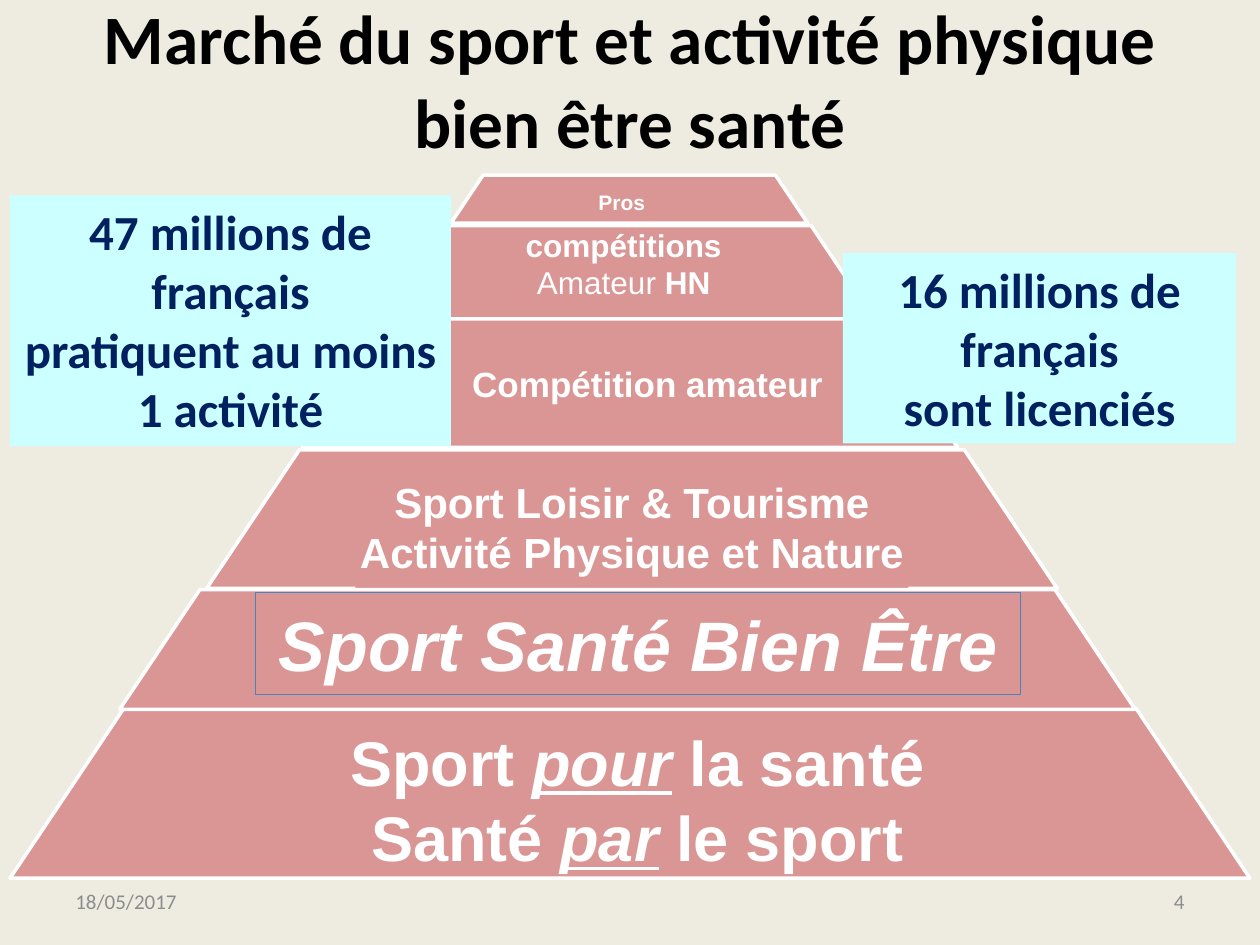
from dataclasses import dataclass

from pptx import Presentation
from pptx.dml.color import RGBColor
from pptx.enum.shapes import MSO_SHAPE as Shape
from pptx.enum.text import MSO_ANCHOR as Anchor, MSO_AUTO_SIZE as AutoSize, PP_ALIGN as Align
from pptx.util import Inches, Pt

CELL = 0.1
COLUMNS, ROWS = 100, 75


@dataclass(frozen=True)
class Theme:
    """Colours, fonts and type sizes of the slide."""
    background: str = "EEECE1"
    tier: str = "D99694"
    white: str = "FFFFFF"
    frame: str = "4F81BD"
    callout: str = "CCFFFF"
    navy: str = "002060"
    black: str = "000000"
    grey: str = "8C8C8C"
    label_font: str = "Arial"
    text_font: str = "Calibri"
    title_size: float = 39.6
    callout_size: int = 28
    footer_size: int = 12
    slope: float = 0.67
    tier_line: float = 2
    frame_line: float = 0.75
    label_inset: float = 0.3
    side_inset: float = 1
    end_inset: float = 0.5


THEME = Theme()
BOLD = {"bold": True}
PLAIN = {"bold": False}
ITALIC = {"bold": True, "italic": True}
STRESSED = {"bold": True, "italic": True, "underline": True}

# Each tier: trapezoid area, label area, type size, paragraphs of (text, format) spans.
BASE = (0.8, 56.2, 98.4, 13.5), (10.4, 58, 80.4, 10.8), 36, [
    [("Sport ", BOLD), ("pour", STRESSED), (" la santé", BOLD)],
    [("Santé ", BOLD), ("par", STRESSED), (" le sport", BOLD)]]
PROS = (35.8, 13.9, 28.3, 3.8), (43.6, 14.7, 11.5, 2.7), 12, [[("Pros", BOLD)]]
ELITE = (30.5, 17.9, 39.1, 7.8), (37.5, 18.7, 24, 4.4), 18, [
    [("compétitions", BOLD)], [("Amateur", PLAIN), (" HN", BOLD)]]
AMATEUR = (24, 25.3, 52, 10.2), (33.1, 28, 36.6, 4.8), 20, [[("Compétition amateur", BOLD)]]
LEISURE = (16.4, 35.7, 67.5, 11), (28.2, 36.8, 43.9, 10), 24, [
    [("Sport Loisir & Tourisme", BOLD)], [("Activité Physique et Nature", BOLD)]]
WELLNESS = (9.5, 46.8, 80.6, 9.5), (20.3, 47, 60.7, 8.1), 40, [[("Sport Santé Bien Être", ITALIC)]]

CALLOUTS = [
    ((0.8, 15.5, 35, 19.9), ["47 millions de français", "pratiquent au moins", "1 activité"]),
    ((66.9, 20.1, 31.2, 15.1), ["16 millions de français", "sont licenciés"]),
]
FOOTERS = [(5, "18/05/2017", Align.LEFT), (71.7, "4", Align.RIGHT)]


def color(code):
    """Turn a hex code into a colour."""
    return RGBColor.from_string(code)


def cells(*counts):
    """Turn counts of grid cells into lengths."""
    return [Inches(count * CELL) for count in counts]


def apply(target, formats):
    """Set each attribute named in the formats."""
    for name, value in formats.items():
        setattr(target, name, value)


def write(box, paragraphs, size, font, ink, align=Align.CENTER,
          anchor=Anchor.MIDDLE, insets=(THEME.side_inset, THEME.end_inset)):
    """Fill a box with paragraphs of formatted spans."""
    frame = box.text_frame
    side, end = cells(*insets)
    apply(frame, {"word_wrap": True, "auto_size": AutoSize.NONE, "vertical_anchor": anchor,
                  "margin_left": side, "margin_right": side,
                  "margin_top": end, "margin_bottom": end})
    for index, spans in enumerate(paragraphs):
        para = frame.add_paragraph() if index else frame.paragraphs[0]
        para.alignment = align
        for text, formats in spans:
            span = para.add_run()
            span.text = text
            apply(span.font, {"size": Pt(size), "name": font, **formats})
            span.font.color.rgb = color(ink)


def add_block(page, preset, area, fill, line=None, width=0):
    """Add a flat filled shape, outlined when a line colour is given."""
    block = page.shapes.add_shape(preset, *cells(*area))
    block.shadow.inherit = False
    block.fill.solid()
    block.fill.fore_color.rgb = color(fill)
    if line:
        block.line.color.rgb = color(line)
        block.line.width = Pt(width)
    else:
        block.line.fill.background()
    return block


def add_tier(page, area, label_area, size, paragraphs, frame=None):
    """Add one pyramid tier with its label."""
    tier = add_block(page, Shape.TRAPEZOID, area, THEME.tier, THEME.white, THEME.tier_line)
    tier.adjustments[0] = THEME.slope
    label = add_block(page, Shape.RECTANGLE, label_area, THEME.tier, frame, THEME.frame_line)
    write(label, paragraphs, size, THEME.label_font, THEME.white,
          insets=(THEME.label_inset, THEME.label_inset))


def add_callout(page, area, lines):
    """Add a key figure beside the pyramid."""
    callout = add_block(page, Shape.RECTANGLE, area, THEME.callout)
    write(callout, [[(line, BOLD)] for line in lines], THEME.callout_size,
          THEME.text_font, THEME.navy, anchor=Anchor.TOP)


def add_footer(page, left, text, align):
    """Add a footer text at the bottom of the slide."""
    box = page.shapes.add_textbox(*cells(left, 69.5, 23.3, 4))
    write(box, [[(text, PLAIN)]], THEME.footer_size, THEME.text_font, THEME.grey, align)


def set_title(page, text):
    """Place and format the slide title."""
    title = page.shapes.title
    apply(title, dict(zip(("left", "top", "width", "height"), cells(5, 0, 90, 12.5))))
    write(title, [[(text, BOLD)]], THEME.title_size, THEME.text_font, THEME.black)


def main():
    """Build the slide and save the deck."""
    deck = Presentation()
    deck.slide_width, deck.slide_height = cells(COLUMNS, ROWS)
    page = deck.slides.add_slide(deck.slide_layouts[5])
    page.background.fill.solid()
    page.background.fill.fore_color.rgb = color(THEME.background)
    set_title(page, "Marché du sport et activité physique bien être santé")
    for footer in FOOTERS:
        add_footer(page, *footer)
    for tier in (BASE, PROS, ELITE, AMATEUR, LEISURE):
        add_tier(page, *tier)
    add_tier(page, *WELLNESS, frame=THEME.frame)
    for callout in CALLOUTS:
        add_callout(page, *callout)
    deck.save("out.pptx")


if __name__ == "__main__":
    main()
